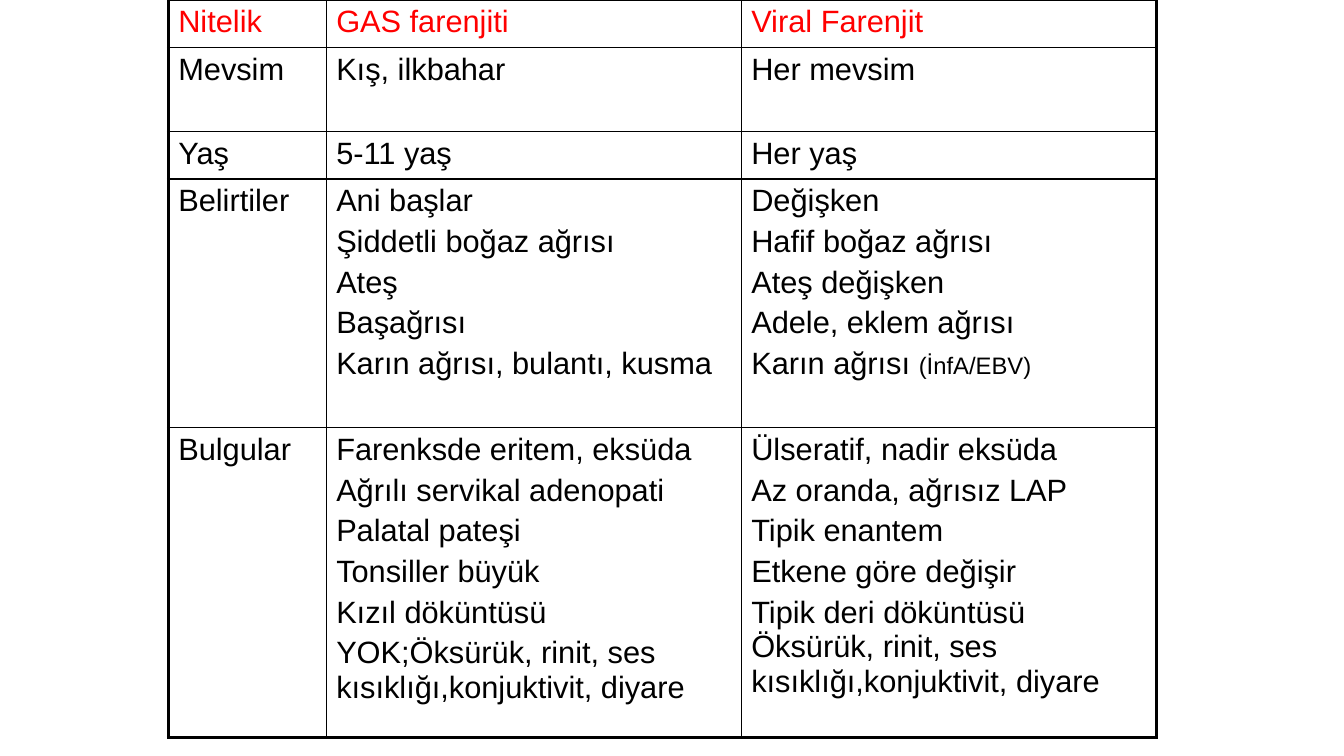
import dataclasses
import typing

import lxml.etree
import pptx
import pptx.dml.color
import pptx.oxml.ns
import pptx.table
import pptx.util

Cm = pptx.util.Cm
Pt = pptx.util.Pt

BLACK = pptx.dml.color.RGBColor(0x00, 0x00, 0x00)
RED = pptx.dml.color.RGBColor(0xFF, 0x00, 0x00)
WHITE = pptx.dml.color.RGBColor(0xFF, 0xFF, 0xFF)

THIN = 1
THICK = 2.25
FONT = {"name": "Arial", "size": Pt(22), "bold": False}
SMALL = {"size": Pt(17)}
PLAIN = {"first_row": False, "horz_banding": False}
SPACE = {"space_before": Pt(4.4)}
WIDTHS = (3.98, 10.46, 10.46)


@dataclasses.dataclass(frozen=True)
class Line:
    text: str
    note: str = ""


@dataclasses.dataclass(frozen=True)
class Row:
    height: float
    label: str
    strep: tuple[Line, ...]
    viral: tuple[Line, ...]
    color: pptx.dml.color.RGBColor = BLACK


ROWS = (
    Row(1.19, "Nitelik", (Line("GAS farenjiti"),), (Line("Viral Farenjit"),), RED),
    Row(2.13, "Mevsim", (Line("Kış, ilkbahar"),), (Line("Her mevsim"),)),
    Row(1.19, "Yaş", (Line("5-11 yaş"),), (Line("Her yaş"),)),
    Row(
        6.27,
        "Belirtiler",
        (
            Line("Ani başlar"),
            Line("Şiddetli boğaz ağrısı"),
            Line("Ateş"),
            Line("Başağrısı"),
            Line("Karın ağrısı, bulantı, kusma"),
        ),
        (
            Line("Değişken"),
            Line("Hafif boğaz ağrısı"),
            Line("Ateş değişken"),
            Line("Adele, eklem ağrısı"),
            Line("Karın ağrısı ", "(İnfA/EBV)"),
        ),
    ),
    Row(
        7.8,
        "Bulgular",
        (
            Line("Farenksde eritem, eksüda"),
            Line("Ağrılı servikal adenopati"),
            Line("Palatal pateşi"),
            Line("Tonsiller büyük"),
            Line("Kızıl döküntüsü"),
            Line("YOK;Öksürük, rinit, ses kısıklığı,konjuktivit, diyare"),
        ),
        (
            Line("Ülseratif, nadir eksüda"),
            Line("Az oranda, ağrısız LAP"),
            Line("Tipik enantem"),
            Line("Etkene göre değişir"),
            Line("Tipik deri döküntüsü Öksürük, rinit, ses kısıklığı,konjuktivit, diyare"),
        ),
    ),
)


def apply(target: typing.Any, values: dict[str, typing.Any]) -> None:
    for name, value in values.items():
        setattr(target, name, value)


def add_edges(cell: pptx.table._Cell, edges: dict[str, float]) -> None:
    qn = pptx.oxml.ns.qn
    props = cell._tc.get_or_add_tcPr()
    for index, (side, width) in enumerate(edges.items()):
        edge = lxml.etree.Element(qn(f"a:ln{side}"), w=str(Pt(width)))
        fill = lxml.etree.SubElement(edge, qn("a:solidFill"))
        lxml.etree.SubElement(fill, qn("a:srgbClr"), val=str(BLACK))
        props.insert(index, edge)


def fill_cell(
    cell: pptx.table._Cell, lines: tuple[Line, ...], color: pptx.dml.color.RGBColor
) -> None:
    cell.fill.solid()
    cell.fill.fore_color.rgb = WHITE
    frame = cell.text_frame
    for index, line in enumerate(lines):
        para = frame.add_paragraph() if index else frame.paragraphs[0]
        apply(para, SPACE)
        for text, extra in ((line.text, {}), (line.note, SMALL)):
            if text:
                run = para.add_run()
                run.text = text
                apply(run.font, FONT | extra)
                run.font.color.rgb = color


def draw_table(slide: typing.Any) -> None:
    total = sum(row.height for row in ROWS)
    frame = slide.shapes.add_table(
        len(ROWS), len(WIDTHS), Cm(4.24), Cm(0), Cm(sum(WIDTHS)), Cm(total)
    )
    table = frame.table
    apply(table, PLAIN)
    for column, width in zip(table.columns, WIDTHS):
        column.width = Cm(width)
    for top, row in enumerate(ROWS):
        table.rows[top].height = Cm(row.height)
        for left, lines in enumerate(((Line(row.label),), row.strep, row.viral)):
            cell = table.cell(top, left)
            fill_cell(cell, lines, row.color)
            outer = {
                "L": left == 0,
                "R": left == len(WIDTHS) - 1,
                "T": top == 0,
                "B": top == len(ROWS) - 1,
            }
            add_edges(cell, {side: THICK if on else THIN for side, on in outer.items()})


def main() -> None:
    deck = pptx.Presentation()
    apply(deck, {"slide_width": Cm(33.87), "slide_height": Cm(19.05)})
    draw_table(deck.slides.add_slide(deck.slide_layouts[6]))
    deck.save("out.pptx")


if __name__ == "__main__":
    main()
